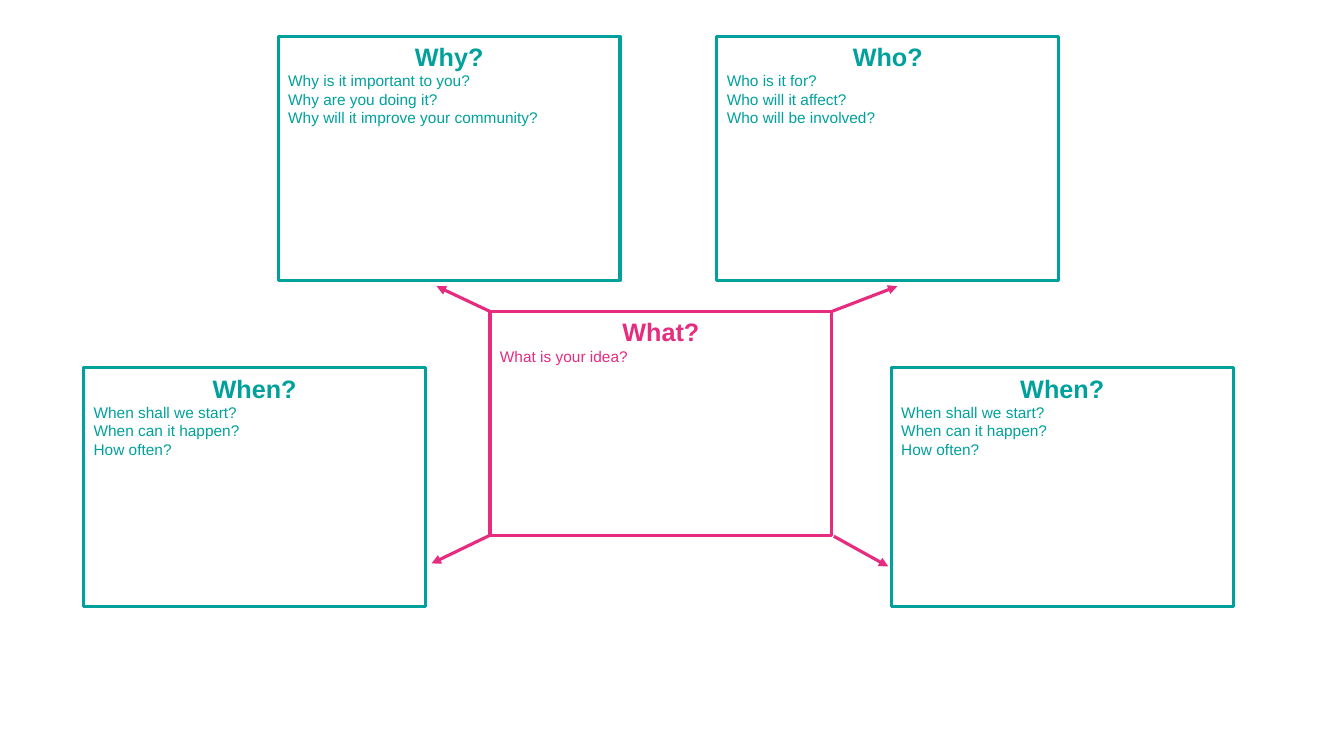
from lxml import etree
from pptx import Presentation
from pptx.dml.color import RGBColor
from pptx.enum.shapes import MSO_CONNECTOR
from pptx.enum.text import MSO_ANCHOR, MSO_AUTO_SIZE, PP_ALIGN
from pptx.oxml.ns import qn
from pptx.util import Emu, Pt

TEAL = RGBColor(0x00, 0xA1, 0x9C)
PINK = RGBColor(0xE6, 0x2C, 0x7F)

PX = 9144  # 100 px to the inch
BOX_WIDTH = 339
TOP_ROW, TOP_HEIGHT = 36, 242
SIDE_ROW, SIDE_HEIGHT = 365, 237
IDEA_LEFT, IDEA_TOP, IDEA_HEIGHT = 486, 309, 222
IDEA_RIGHT = IDEA_LEFT + BOX_WIDTH
IDEA_BOTTOM = IDEA_TOP + IDEA_HEIGHT

WHEN_PROMPTS = ["When shall we start?", "When can it happen?", "How often?"]


class IdeaMap:
    font_name = "Arial"
    heading_size = Pt(18)
    prompt_size = Pt(11)
    line_width = Pt(2.25)

    def __init__(self, slide):
        self.slide = slide

    def question_box(self, left, top, height, color, heading, prompts):
        """Draw an outlined box with a centred heading above its prompts."""
        box = self.slide.shapes.add_textbox(
            *(Emu(length * PX) for length in (left, top, BOX_WIDTH, height)))
        box.fill.background()
        box.line.color.rgb = color
        box.line.width = self.line_width
        text_frame = box.text_frame
        text_frame.word_wrap = True
        text_frame.auto_size = MSO_AUTO_SIZE.NONE
        text_frame.vertical_anchor = MSO_ANCHOR.TOP
        text_frame.text = "\n".join([heading, *prompts])
        for index, paragraph in enumerate(text_frame.paragraphs):
            is_heading = index == 0
            paragraph.alignment = PP_ALIGN.CENTER if is_heading else PP_ALIGN.LEFT
            font = paragraph.runs[0].font
            font.name = self.font_name
            font.size = self.heading_size if is_heading else self.prompt_size
            font.bold = is_heading
            font.color.rgb = color

    def arrow(self, start, end):
        connector = self.slide.shapes.add_connector(
            MSO_CONNECTOR.STRAIGHT,
            *(Emu(length * PX) for length in (*start, *end)))
        connector.line.color.rgb = PINK
        connector.line.width = self.line_width
        outline = connector.line._get_or_add_ln()
        etree.SubElement(outline, qn("a:tailEnd"), type="triangle")
        etree.SubElement(connector._element.spPr, qn("a:effectLst"))


def main():
    presentation = Presentation()
    presentation.slide_width = Emu(1333 * PX)
    presentation.slide_height = Emu(750 * PX)
    slide = presentation.slides.add_slide(presentation.slide_layouts[6])
    idea_map = IdeaMap(slide)

    idea_map.question_box(IDEA_LEFT, IDEA_TOP, IDEA_HEIGHT, PINK, "What?",
                          ["What is your idea?"])
    idea_map.question_box(711, TOP_ROW, TOP_HEIGHT, TEAL, "Who?",
                          ["Who is it for?", "Who will it affect?",
                           "Who will be involved?"])
    for left in (884, 83):
        idea_map.question_box(left, SIDE_ROW, SIDE_HEIGHT, TEAL, "When?",
                              WHEN_PROMPTS)
    idea_map.question_box(276, TOP_ROW, TOP_HEIGHT, TEAL, "Why?",
                          ["Why is it important to you?",
                           "Why are you doing it?",
                           "Why will it improve your community?"])

    idea_map.arrow((IDEA_LEFT, IDEA_TOP), (433, 284))
    idea_map.arrow((IDEA_RIGHT, IDEA_TOP), (890, 284))
    idea_map.arrow((IDEA_LEFT, IDEA_BOTTOM), (428, 559))
    idea_map.arrow((IDEA_RIGHT + 2, IDEA_BOTTOM + 1), (881, 562))

    presentation.save("out.pptx")


if __name__ == "__main__":
    main()
